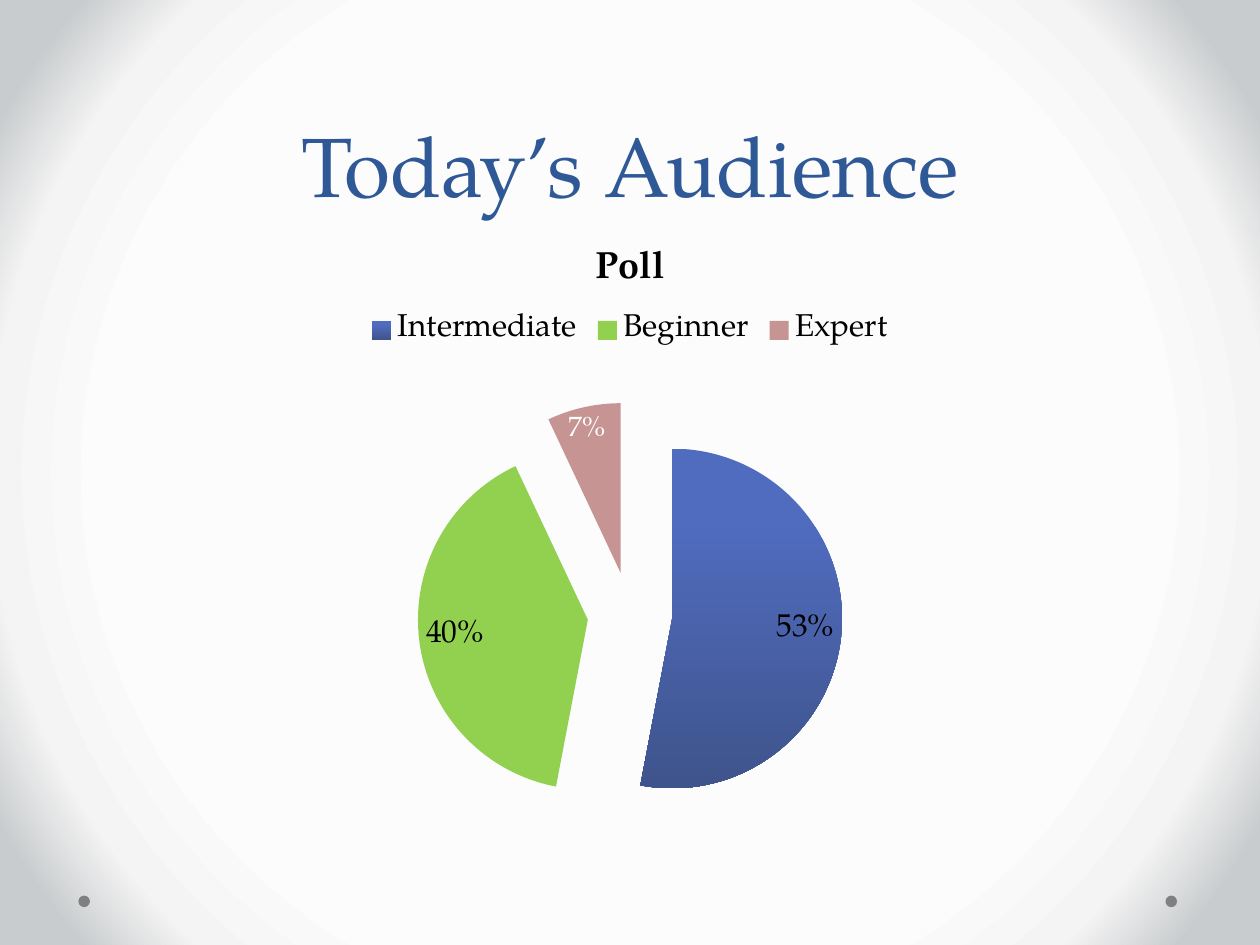
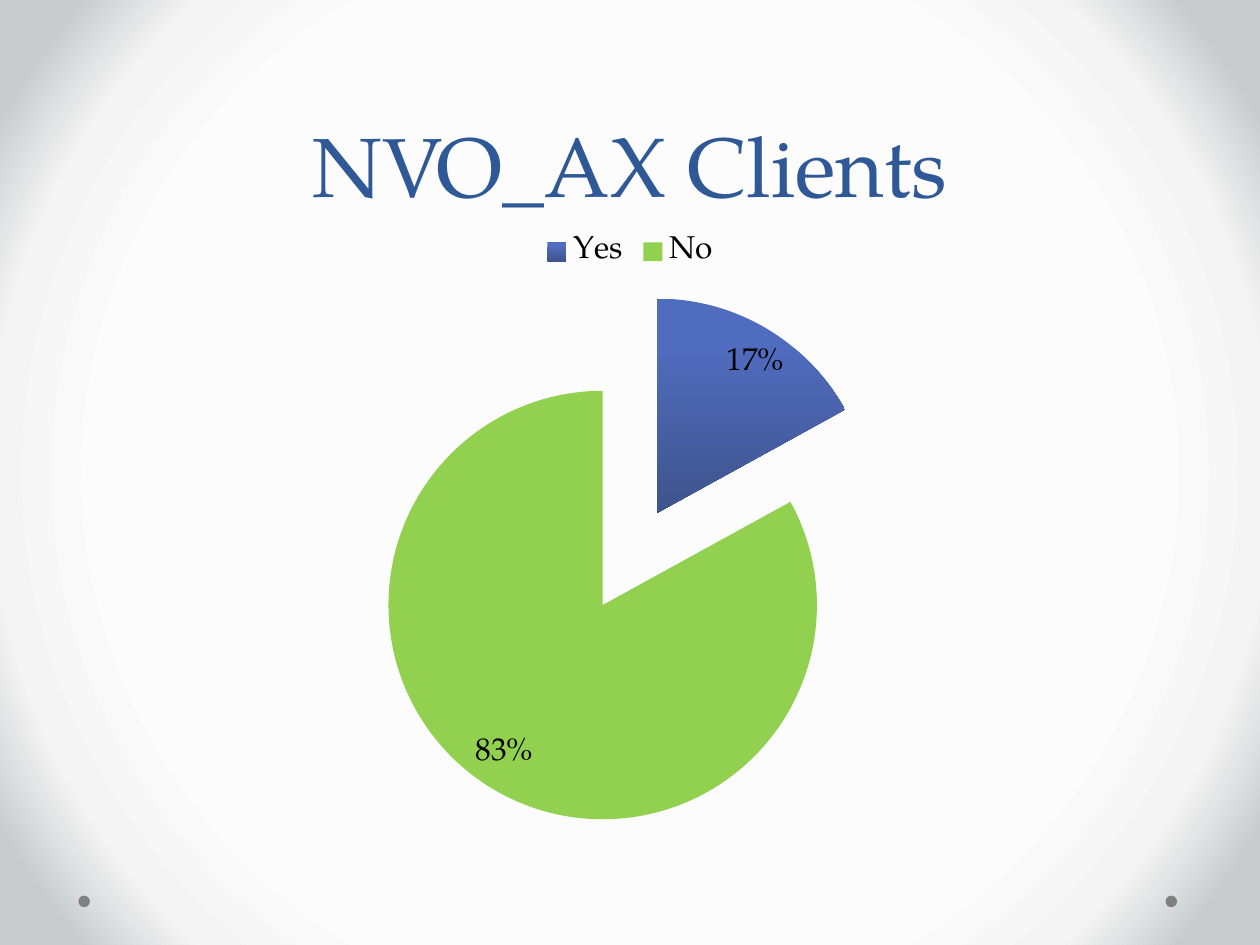
import pptx
import pptx.chart.data
import pptx.dml.color
import pptx.enum.chart
import pptx.enum.shapes
import pptx.enum.text
import pptx.oxml
import pptx.oxml.ns
import pptx.util

Pt = pptx.util.Pt
FONT = "TeX Gyre Pagella"
COLORS = {
    "title": "2F5897", "text": "000000", "light": "FFFFFF", "dot": "808080",
    "blue_top": "506CBF", "blue_bottom": "3F548C", "green": "92D050", "rose": "C79494",
}
BACKDROP = [(66, "FCFCFC"), (81, "F4F4F4"), (92, "C8CCCE")]
POLLS = [
    ("Today’s Audience", "Poll", "Poll", {"Intermediate": 53, "Beginner": 40, "Expert": 7}),
    ("NVO_AX Clients", None, "Series 1", {"Yes": 17, "No": 83}),
]


def rgb(name):
    return pptx.dml.color.RGBColor.from_string(COLORS[name])


def style(font, size, color):
    font.name = FONT
    font.size = Pt(size)
    font.color.rgb = rgb(color)


deck = pptx.Presentation()
deck.slide_width, deck.slide_height = Pt(720), Pt(540)

for heading, chart_heading, series_name, answers in POLLS:
    slide = deck.slides.add_slide(deck.slide_layouts[6])

    slide.background.fill.gradient()
    gradient = slide._element.xpath(".//p:bgPr/a:gradFill")[0]
    stops = "".join(
        f'<a:gs pos="{pos * 1000}"><a:srgbClr val="{color}"/></a:gs>' for pos, color in BACKDROP
    )
    radial = pptx.oxml.parse_xml(
        f'<a:gradFill {pptx.oxml.ns.nsdecls("a")} rotWithShape="1"><a:gsLst>{stops}</a:gsLst>'
        '<a:path path="circle"><a:fillToRect l="50000" t="50000" r="50000" b="50000"/></a:path>'
        "</a:gradFill>"
    )
    gradient.getparent().replace(gradient, radial)

    for left in (666, 44.8):
        dot = slide.shapes.add_shape(
            pptx.enum.shapes.MSO_SHAPE.OVAL, Pt(left), Pt(511.8), Pt(6.6), Pt(6.6)
        )
        dot.shadow.inherit = False
        dot.fill.solid()
        dot.fill.fore_color.rgb = rgb("dot")
        dot.line.fill.background()

    title = slide.shapes.add_textbox(Pt(36), Pt(0), Pt(648), Pt(126)).text_frame
    title.word_wrap = True
    title.vertical_anchor = pptx.enum.text.MSO_ANCHOR.BOTTOM
    title_line = title.paragraphs[0]
    title_line.alignment = pptx.enum.text.PP_ALIGN.CENTER
    title_line.line_spacing = Pt(58)
    title_run = title_line.add_run()
    title_run.text = heading
    style(title_run.font, 48, "title")

    poll_data = pptx.chart.data.CategoryChartData()
    poll_data.categories = list(answers)
    poll_data.add_series(series_name, list(answers.values()))
    pie = slide.shapes.add_chart(
        pptx.enum.chart.XL_CHART_TYPE.PIE, Pt(36), Pt(126), Pt(648), Pt(356.4), poll_data
    ).chart
    style(pie.font, 18, "text")
    pie.has_title = chart_heading is not None
    if chart_heading:
        poll_title = pie.chart_title.text_frame.paragraphs[0].add_run()
        poll_title.text = chart_heading
        style(poll_title.font, 21.6, "text")
        poll_title.font.bold = True
    pie.has_legend = True
    pie.legend.position = pptx.enum.chart.XL_LEGEND_POSITION.TOP
    pie.legend.include_in_layout = False
    style(pie.legend.font, 18, "text")

    pie.plots[0].vary_by_categories = True
    shares = pie.plots[0].series[0]
    explosion = pptx.oxml.parse_xml(f'<c:explosion {pptx.oxml.ns.nsdecls("c")} val="25"/>')
    shares._element.xpath("c:tx")[0].addnext(explosion)

    first_slice = shares.points[0].format.fill
    first_slice.gradient()
    first_slice.gradient_angle = 270
    for stop, position, color in zip(
        first_slice.gradient_stops, (0.2, 1), ("blue_top", "blue_bottom")
    ):
        stop.position = position
        stop.color.rgb = rgb(color)
    for index, color in list(enumerate(("green", "rose"), 1))[:len(answers) - 1]:
        slice_fill = shares.points[index].format.fill
        slice_fill.solid()
        slice_fill.fore_color.rgb = rgb(color)

    labels = shares.data_labels
    labels.show_percentage = True
    labels.show_value = False
    labels.number_format = "0%"
    labels.number_format_is_linked = False
    labels.position = pptx.enum.chart.XL_LABEL_POSITION.BEST_FIT
    style(labels.font, 18, "text")
    if "Expert" in answers:
        expert_label = shares.points[2].data_label
        style(expert_label.font, 16, "light")
        expert_label.position = pptx.enum.chart.XL_LABEL_POSITION.BEST_FIT
        for flag, shown in (("showVal", "0"), ("showPercent", "1")):
            shares._element.xpath(f".//c:dLbl/c:{flag}")[0].set("val", shown)

deck.save("out.pptx")
